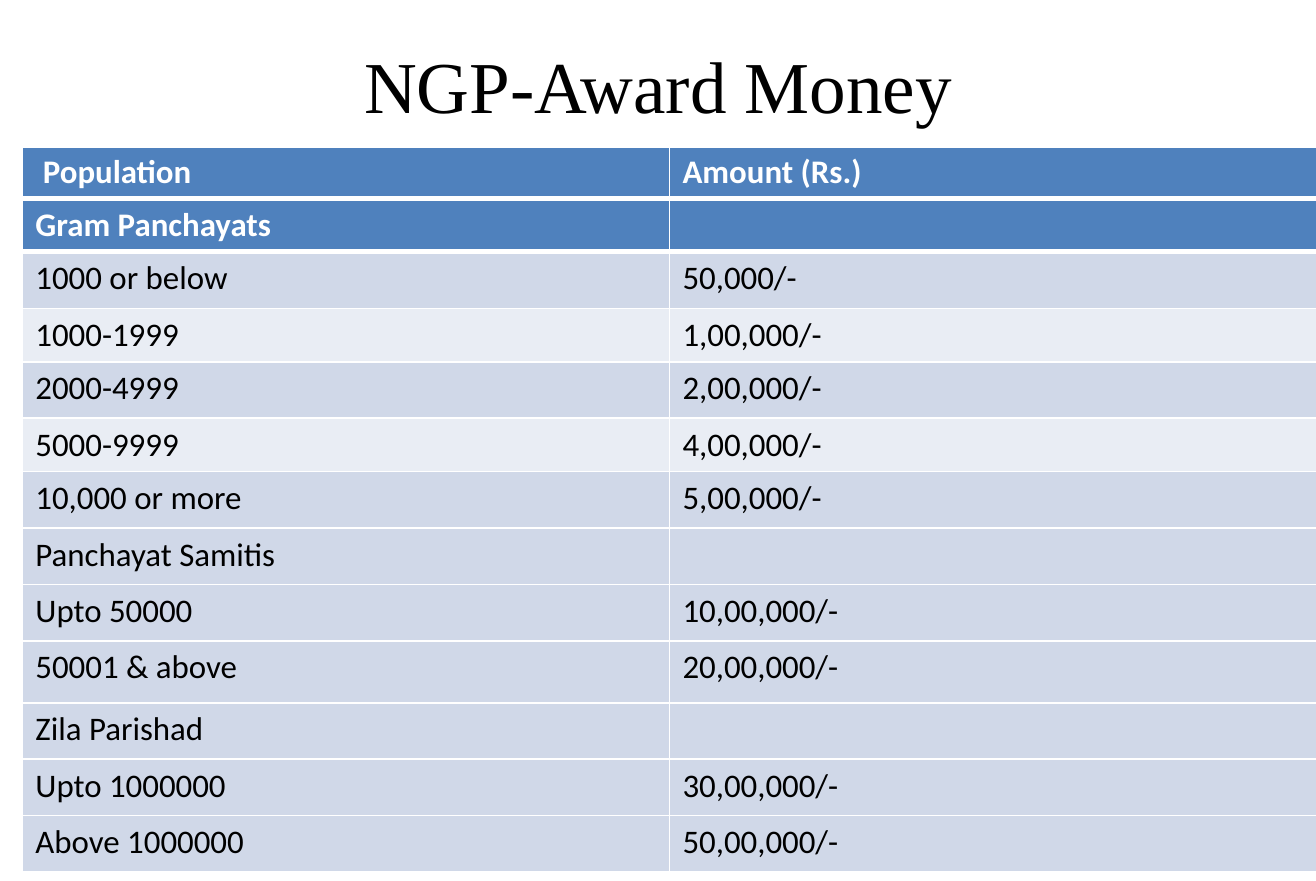
import pptx
import pptx.util
import pptx.dml.color
import pptx.enum.text
import pptx.oxml
import pptx.oxml.ns

Cm, Pt = pptx.util.Cm, pptx.util.Pt
HUES = {"head": "4F81BD", "dark": "D0D8E8", "pale": "E9EDF4",
        "white": "FFFFFF", "black": "000000"}
TITLE = "NGP-Award Money"
ROWS = [
    (" Population", "Amount (Rs.)", "head", 0.84),
    ("Gram Panchayats", "", "head", 0.69),
    ("1000 or below", "50,000/-", "dark", 1.09),
    ("1000-1999", "1,00,000/-", "pale", 0.69),
    ("2000-4999", "2,00,000/-", "dark", 1.09),
    ("5000-9999", "4,00,000/-", "pale", 0.84),
    ("10,000 or more", "5,00,000/-", "dark", 1.09),
    ("Panchayat Samitis", "", "dark", 1.09),
    ("Upto 50000", "10,00,000/-", "dark", 1.09),
    ("50001 & above", "20,00,000/-", "dark", 1.19),
    ("Zila Parishad", "", "dark", 1.09),
    ("Upto 1000000", "30,00,000/-", "dark", 1.09),
    ("Above 1000000", "50,00,000/-", "dark", 1.09),
]


def color(name):
    return pptx.dml.color.RGBColor.from_string(HUES[name])


def add_run(para, text, font, size, hue, bold=False):
    run = para.add_run()
    run.text = text
    run.font.name = font
    run.font.size = Pt(size)
    run.font.bold = bold
    run.font.color.rgb = color(hue)


def border(cell, top, base):
    props = cell._tc.get_or_add_tcPr()
    for spot, (side, width) in enumerate(
            [("L", 1), ("R", 1), ("T", top), ("B", base)]):
        props.insert(spot, pptx.oxml.parse_xml(
            f'<a:ln{side} {pptx.oxml.ns.nsdecls("a")} w="{Pt(width)}">'
            f'<a:solidFill><a:srgbClr val="{HUES["white"]}"/></a:solidFill>'
            f'</a:ln{side}>'))


def add_title(slide):
    title = slide.shapes.title
    title.left, title.top = Cm(0), Cm(0.68)
    title.width, title.height = Cm(25.4), Cm(1.9)
    frame = title.text_frame
    frame.word_wrap = True
    frame.vertical_anchor = pptx.enum.text.MSO_ANCHOR.MIDDLE
    para = frame.paragraphs[0]
    para.alignment = pptx.enum.text.PP_ALIGN.CENTER
    add_run(para, TITLE, "Times New Roman", 40, "black")


def add_awards(slide):
    tall = Cm(14)
    shape = slide.shapes.add_table(
        len(ROWS), 2, Cm(0.43), Cm(2.8), Cm(24.98), tall)
    table = shape.table
    above = 3
    for r, (group, amount, fill, height) in enumerate(ROWS):
        table.rows[r].height = Cm(height)
        head = fill == "head"
        below = 3 if head else 1
        for c, text in enumerate((group, amount)):
            cell = table.cell(r, c)
            cell.fill.solid()
            cell.fill.fore_color.rgb = color(fill)
            border(cell, above, below)
            if text:
                add_run(cell.text_frame.paragraphs[0], text, "Calibri", 18,
                        "white" if head else "black", head)
        above = below
    shape.height = tall


def main():
    deck = pptx.Presentation()
    deck.slide_width, deck.slide_height = Cm(25.4), Cm(17)
    slide = deck.slides.add_slide(deck.slide_layouts[5])
    add_title(slide)
    add_awards(slide)
    deck.save("out.pptx")


if __name__ == "__main__":
    main()
